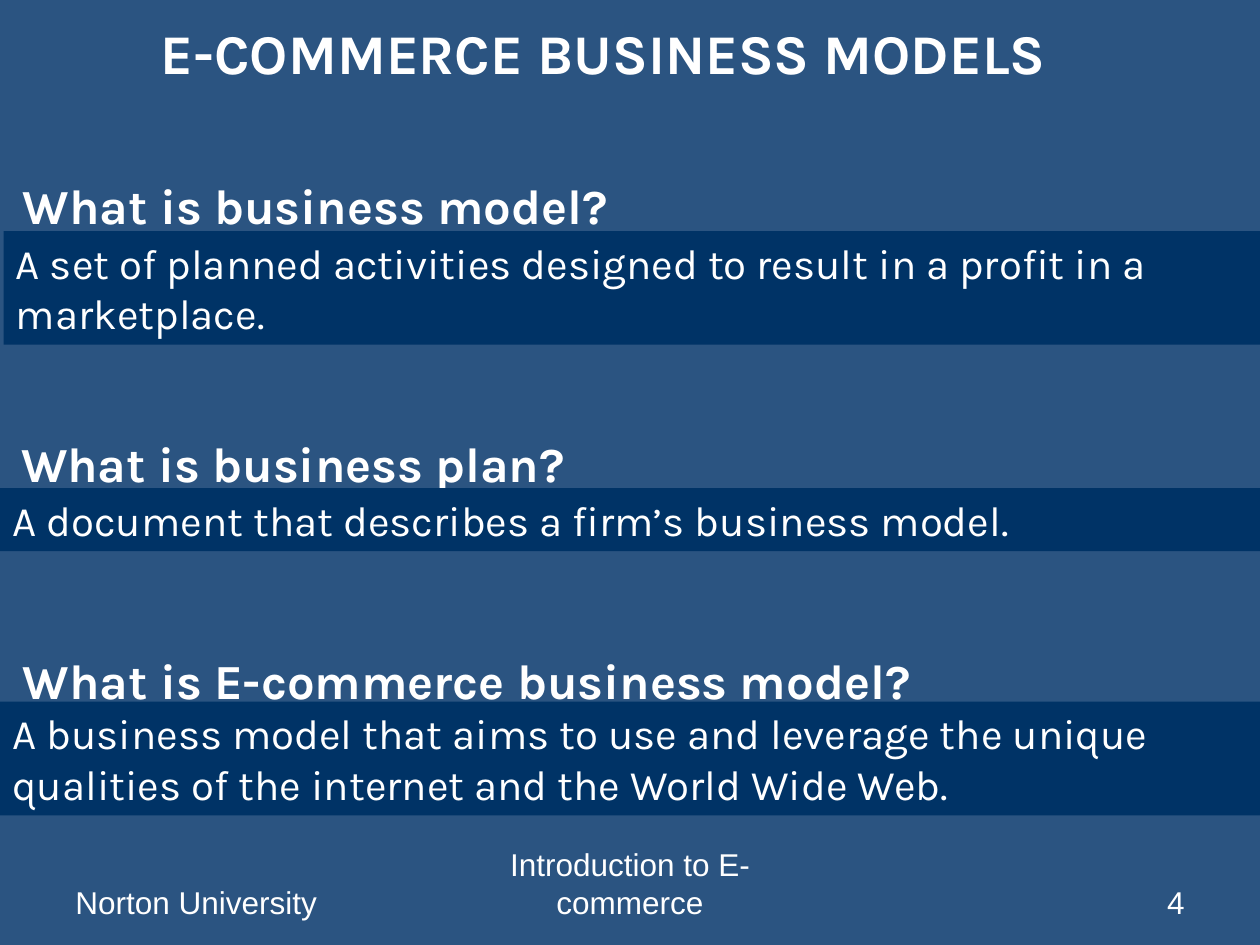
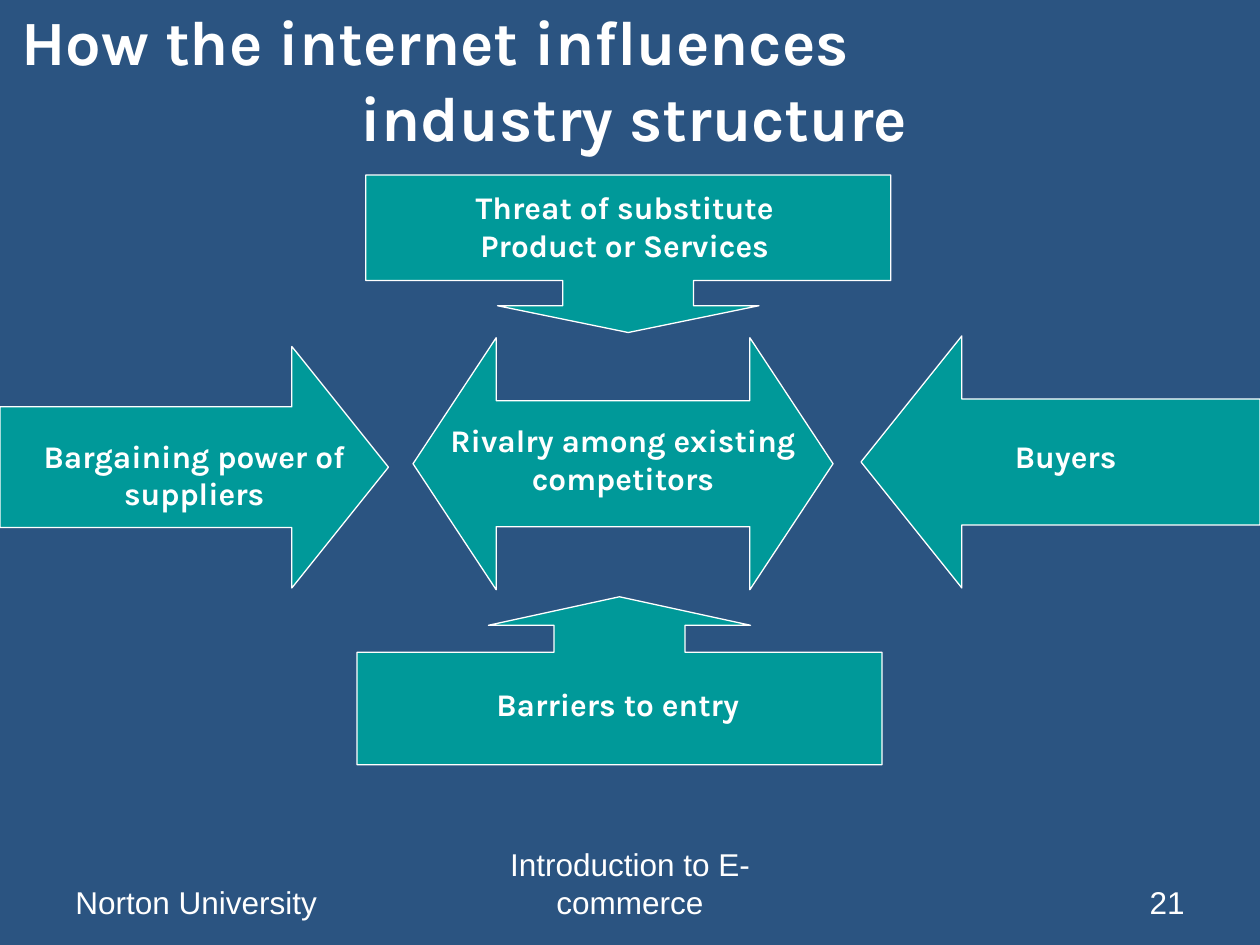
from pptx import Presentation
from pptx.dml.color import RGBColor
from pptx.enum.shapes import MSO_SHAPE
from pptx.enum.text import MSO_ANCHOR, MSO_AUTO_SIZE, PP_ALIGN
from pptx.util import Pt

LEFT, CENTER, RIGHT = PP_ALIGN.LEFT, PP_ALIGN.CENTER, PP_ALIGN.RIGHT
TOP, BOTTOM = MSO_ANCHOR.TOP, MSO_ANCHOR.BOTTOM
RECTANGLE = MSO_SHAPE.RECTANGLE
DOWN_CALLOUT = MSO_SHAPE.DOWN_ARROW_CALLOUT
UP_CALLOUT = MSO_SHAPE.UP_ARROW_CALLOUT
RIGHT_ARROW = MSO_SHAPE.RIGHT_ARROW
LEFT_ARROW = MSO_SHAPE.LEFT_ARROW
DOUBLE_ARROW = MSO_SHAPE.LEFT_RIGHT_ARROW

COLORS = {"background": "2B5481", "band": "003366", "force": "009999", "text": "FFFFFF"}
HEADING_FONT, FOOTER_FONT = "Karla", "Arial"
TITLE_ONLY = 5
WIDTH, HEIGHT = 720, 540


def color(name):
    return RGBColor.from_string(COLORS[name])


class Deck:
    """Holds the shared style and the slide being built."""

    def __init__(self):
        self.presentation = Presentation()
        self.presentation.slide_width = Pt(WIDTH)
        self.presentation.slide_height = Pt(HEIGHT)
        fill = self.presentation.slide_master.background.fill
        fill.solid()
        fill.fore_color.rgb = color("background")
        self.slide = None

    def add_slide(self, number):
        layout = self.presentation.slide_layouts[TITLE_ONLY]
        self.slide = self.presentation.slides.add_slide(layout)
        footers = [
            (36, 168, "Norton University", LEFT),
            (246, 228, "Introduction to E-commerce", CENTER),
            (516, 168, str(number), RIGHT),
        ]
        for left, width, text, align in footers:
            self.text(left, 492, width, 37.5, text, 18, align,
                      font=FOOTER_FONT, bold=False, anchor=BOTTOM)

    def set_text(self, shape, lines, size, aligns, font=HEADING_FONT, bold=True, anchor=TOP):
        """Fill a shape with one paragraph per line, each with its own alignment."""
        frame = shape.text_frame
        frame.word_wrap = True
        frame.auto_size = MSO_AUTO_SIZE.NONE
        frame.vertical_anchor = anchor
        frame.text = "\n".join(lines)
        for paragraph, align in zip(frame.paragraphs, aligns):
            paragraph.alignment = align
            paragraph.font.name = font
            paragraph.font.size = Pt(size)
            paragraph.font.bold = bold
            paragraph.font.color.rgb = color("text")

    def title(self, left, top, width, height, lines, size, aligns):
        title = self.slide.shapes.title
        title.left, title.top = Pt(left), Pt(top)
        title.width, title.height = Pt(width), Pt(height)
        self.set_text(title, lines, size, aligns)
        return title

    def text(self, left, top, width, height, text, size, align, **style):
        box = self.slide.shapes.add_textbox(Pt(left), Pt(top), Pt(width), Pt(height))
        self.set_text(box, [text], size, [align], **style)

    def shape(self, kind, left, top, width, height, fill, adjustments=(), outlined=False):
        shape = self.slide.shapes.add_shape(kind, Pt(left), Pt(top), Pt(width), Pt(height))
        shape.shadow.inherit = False
        shape.fill.solid()
        shape.fill.fore_color.rgb = color(fill)
        for index, value in enumerate(adjustments):
            shape.adjustments[index] = value
        if outlined:
            shape.line.color.rgb = color("text")
            shape.line.width = Pt(0.75)
        else:
            shape.line.fill.background()
        return shape

    def definition(self, question, answer, question_left, question_top,
                   band_left, band_top, band_height):
        self.text(question_left, question_top, 570, 41, question, 28, LEFT)
        band = self.shape(RECTANGLE, band_left, band_top, WIDTH - band_left,
                          band_height, "band")
        self.set_text(band, [answer], 24, [LEFT], bold=False)

    def force(self, kind, box, adjustments):
        self.shape(kind, *box, "force", adjustments, outlined=True)

    def force_label(self, left, top, text):
        self.text(left, top, 222, 50, text, 18, CENTER)


def build_definitions(deck):
    deck.add_slide(4)
    deck.title(54, 7, 582, 45, ["E-COMMERCE BUSINESS MODELS"], 32, [CENTER])
    definitions = [
        ("What is business model?",
         "A set of planned activities designed to result in a profit in a marketplace.",
         6, 97, 2, 132, 65),
        ("What is business plan?",
         "A document that describes a firm’s business model.",
         5, 244, 0, 279, 36),
        ("What is E-commerce business model?",
         "A business model that aims to use and leverage the unique qualities "
         "of the internet and the World Wide Web.",
         6, 368, 0, 401, 65),
    ]
    for definition in definitions:
        deck.definition(*definition)


def build_industry_forces(deck):
    deck.add_slide(21)
    title = deck.title(0, -2, WIDTH, 94,
                       ["How the internet influences", "industry structure"],
                       36, [LEFT, CENTER])
    first_line = title.text_frame.paragraphs[0]
    first_line._p.get_or_add_pPr().set("marL", str(Pt(5)))

    forces = [
        (DOWN_CALLOUT, (209, 100, 300, 90), (0.83, 0.83, 0.17, 0.67)),
        (UP_CALLOUT, (204, 341, 300, 96), (0.78, 0.78, 0.17, 0.67)),
        (RIGHT_ARROW, (0, 198, 222, 138), (0.5, 0.4)),
        (LEFT_ARROW, (492, 192, 228, 144), (0.5, 0.4)),
        (DOUBLE_ARROW, (236, 193, 240, 144), (0.5, 0.33)),
    ]
    for force in forces:
        deck.force(*force)

    labels = [
        (246, 104, "Threat of substitute Product or Services"),
        (242, 388, "Barriers to entry"),
        (0, 246, "Bargaining power of suppliers"),
        (245, 237, "Rivalry among existing competitors"),
        (498, 246, "Buyers"),
    ]
    for label in labels:
        deck.force_label(*label)


def main():
    deck = Deck()
    build_definitions(deck)
    build_industry_forces(deck)
    deck.presentation.save("out.pptx")


if __name__ == "__main__":
    main()
